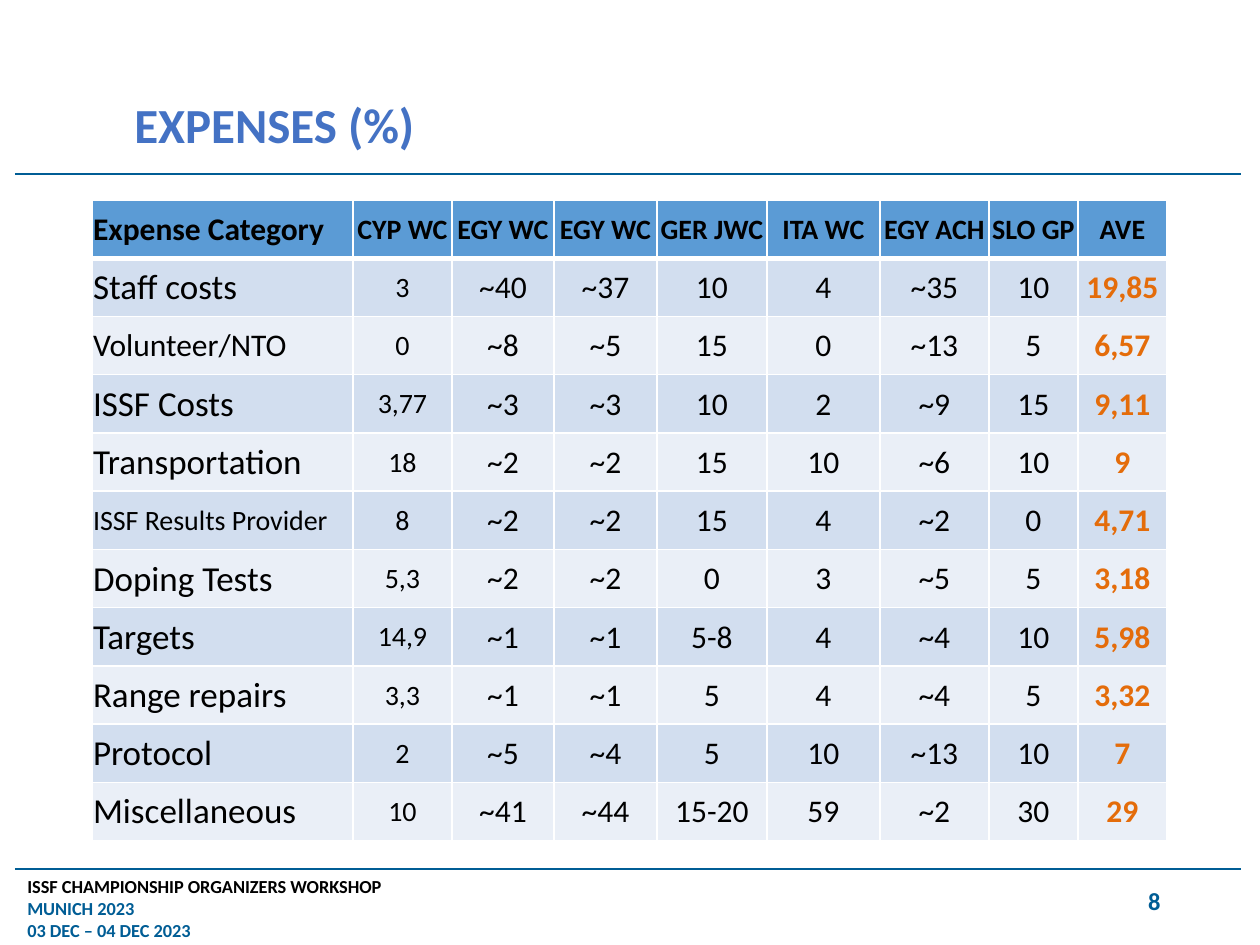
import pptx
import pptx.util
import pptx.dml.color
import pptx.enum.shapes
import pptx.enum.text
import lxml.etree

# Content
TITLE = "EXPENSES (%)"
PAGE = "8"
FOOT = [
    ("ISSF CHAMPIONSHIP ORGANIZERS WORKSHOP", "black"),
    ("MUNICH 2023", "navy"),
    ("03 DEC – 04 DEC 2023", "navy"),
]
HEAD = ["Expense Category", "CYP WC", "EGY WC", "EGY WC", "GER JWC",
        "ITA WC", "EGY ACH", "SLO GP", "AVE"]
ROWS = [
    ["Staff costs", "3", "~40", "~37", "10", "4", "~35", "10", "19,85"],
    ["Volunteer/NTO", "0", "~8", "~5", "15", "0", "~13", "5", "6,57"],
    ["ISSF Costs", "3,77", "~3", "~3", "10", "2", "~9", "15", "9,11"],
    ["Transportation", "18", "~2", "~2", "15", "10", "~6", "10", "9"],
    ["ISSF Results Provider", "8", "~2", "~2", "15", "4", "~2", "0", "4,71"],
    ["Doping Tests", "5,3", "~2", "~2", "0", "3", "~5", "5", "3,18"],
    ["Targets", "14,9", "~1", "~1", "5-8", "4", "~4", "10", "5,98"],
    ["Range repairs", "3,3", "~1", "~1", "5", "4", "~4", "5", "3,32"],
    ["Protocol", "2", "~5", "~4", "5", "10", "~13", "10", "7"],
    ["Miscellaneous", "10", "~41", "~44", "15-20", "59", "~2", "30", "29"],
]
SMALL = {"Volunteer/NTO": 18, "ISSF Results Provider": 16}
COLS = [261, 99, 102, 103, 110, 113, 109, 89, 89]
HIGH = 641
COLOR = {"black": "000000", "navy": "005D95", "title": "4472C4",
         "head": "5B9BD5", "odd": "D2DEEF", "even": "EAEFF7",
         "mean": "E46C0A", "white": "FFFFFF"}
FONT = "Calibri"

ALIGN = pptx.enum.text.PP_ALIGN
ANCHOR = pptx.enum.text.MSO_ANCHOR


def px(n):
    return pptx.util.Emu(round(n * 914400 / 126))


def rgb(name):
    return pptx.dml.color.RGBColor.from_string(COLOR[name])


def style(para, size, color, bold=True, align=ALIGN.LEFT):
    para.alignment = align
    font = para.font
    font.name, font.size, font.bold = FONT, pptx.util.Pt(size), bold
    font.color.rgb = rgb(color)


def box(x, y, w, h, anchor, lines, size, align=ALIGN.LEFT):
    frame = slide.shapes.add_textbox(px(x), px(y), px(w), px(h)).text_frame
    frame.word_wrap = True
    frame.vertical_anchor = anchor
    for i, (text, color) in enumerate(lines):
        para = frame.add_paragraph() if i else frame.paragraphs[0]
        para.text = text
        style(para, size, color, align=align)
    return frame


def rule(y):
    line = slide.shapes.add_connector(
        pptx.enum.shapes.MSO_CONNECTOR.STRAIGHT, px(15), px(y), px(1241), px(y))
    line.line.color.rgb = rgb("navy")
    line.line.width = pptx.util.Pt(0.75)
    lxml.etree.SubElement(line._element.spPr, pptx.oxml.ns.qn("a:effectLst"))


def edge(cell, row):
    props = cell._tc.get_or_add_tcPr()
    thick = {"T": 3 if row == 1 else 1, "B": 3 if row == 0 else 1}
    for side in "LRTB":
        line = lxml.etree.SubElement(props, pptx.oxml.ns.qn("a:ln" + side),
                                     w=str(12700 * thick.get(side, 1)))
        fill = lxml.etree.SubElement(line, pptx.oxml.ns.qn("a:solidFill"))
        lxml.etree.SubElement(fill, pptx.oxml.ns.qn("a:srgbClr"),
                              val=COLOR["white"])


def look(row, col, text):
    """Size, colour and weight of a cell's text."""
    if row == 0:
        return (16 if col else 18), "black", True
    if col == 0:
        return SMALL.get(text, 20), "black", False
    if col == len(COLS) - 1:
        return 18, "mean", True
    return (16 if col == 1 else 18), "black", False


deck = pptx.Presentation()
deck.slide_width, deck.slide_height = px(1260), px(945)
slide = deck.slides.add_slide(deck.slide_layouts[6])

# Rules and footer
for y in (174, 869):
    rule(y)
box(15, 869, 1235, 117, ANCHOR.TOP, FOOT, 10.5)

# Title
frame = box(122, 76, 893, 84, ANCHOR.BOTTOM, [(TITLE, "title")], 28)
frame.paragraphs[0].line_spacing = 0.9

# Expense table
data = [HEAD] + ROWS
table = slide.shapes.add_table(len(data), len(COLS), px(92), px(200),
                               px(sum(COLS)), px(HIGH)).table
for col, wide in enumerate(COLS):
    table.columns[col].width = px(wide)
for row, texts in enumerate(data):
    table.rows[row].height = px(HIGH / len(data))
    for col, text in enumerate(texts):
        cell = table.cell(row, col)
        cell.margin_left = cell.margin_right = cell.margin_top = px(1)
        cell.margin_bottom = 0
        cell.vertical_anchor = ANCHOR.MIDDLE
        edge(cell, row)
        cell.fill.solid()
        cell.fill.fore_color.rgb = rgb(
            "head" if row == 0 else "odd" if row % 2 else "even")
        cell.text = text
        para = cell.text_frame.paragraphs[0]
        style(para, *look(row, col, text),
              align=ALIGN.CENTER if col else ALIGN.LEFT)
        if row:
            para.space_after = pptx.util.Pt(2)

# Page number
box(890, 876, 283, 50, ANCHOR.MIDDLE, [(PAGE, "navy")], 14, ALIGN.RIGHT)

deck.save("out.pptx")
